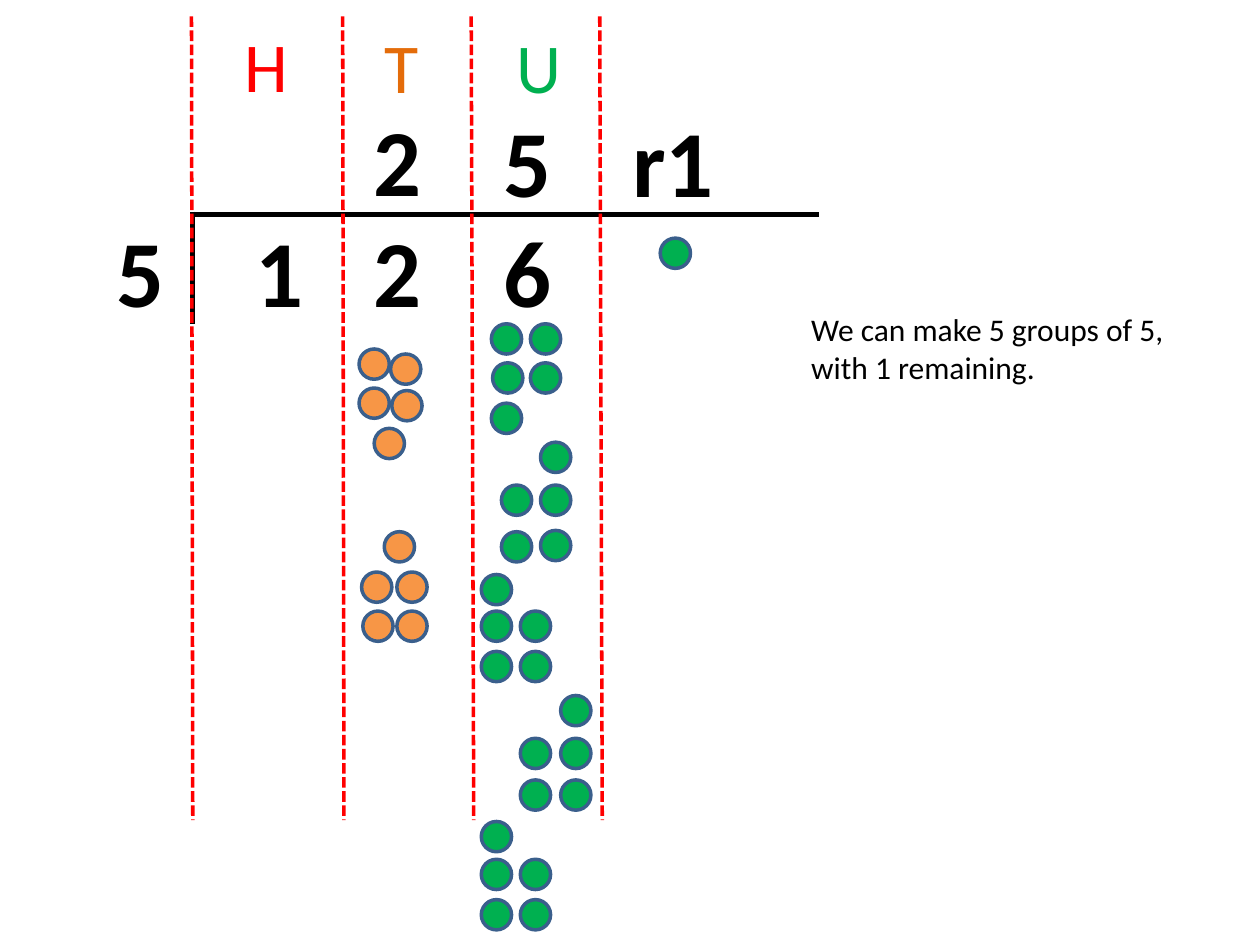
from pptx import Presentation
from pptx.dml.color import RGBColor
from pptx.enum.dml import MSO_LINE
from pptx.enum.shapes import MSO_CONNECTOR, MSO_SHAPE
from pptx.enum.text import MSO_AUTO_SIZE
from pptx.oxml.ns import qn
from pptx.util import Inches, Pt
from lxml import etree

STRAIGHT = MSO_CONNECTOR.STRAIGHT
OVAL = MSO_SHAPE.OVAL
DASH = MSO_LINE.SQUARE_DOT
FIT = MSO_AUTO_SIZE.SHAPE_TO_FIT_TEXT

BLACK = RGBColor(0x00, 0x00, 0x00)
RED = RGBColor(0xFF, 0x00, 0x00)
DARK_ORANGE = RGBColor(0xE4, 0x6C, 0x0A)
ORANGE = RGBColor(0xF7, 0x96, 0x46)
GREEN = RGBColor(0x00, 0xB0, 0x50)
BLUE = RGBColor(0x3A, 0x5F, 0x8C)

DIGIT_W, DIGIT_H = 0.47, 1.01
LETTER_H = 0.77
COUNTER = 0.24

TENS_GROUPS = [
    [(2.85, 2.77), (3.1, 2.81), (2.85, 3.08), (3.11, 3.1), (2.97, 3.4)],
    [(3.05, 4.22), (2.87, 4.54), (3.15, 4.54), (2.88, 4.85), (3.15, 4.85)],
]
UNITS_GROUPS = [
    [(3.9, 2.57), (4.21, 2.57), (3.91, 2.88), (4.21, 2.88), (3.9, 3.2)],
    [(4.29, 3.51), (3.98, 3.85), (4.29, 3.85), (3.98, 4.22), (4.29, 4.21)],
    [(3.82, 4.56), (3.82, 4.85), (4.13, 4.85), (3.82, 5.17), (4.13, 5.17)],
    [(4.45, 5.52), (4.13, 5.86), (4.45, 5.86), (4.13, 6.19), (4.45, 6.19)],
    [(3.82, 6.52), (3.82, 6.82), (4.13, 6.82), (3.82, 7.14), (4.13, 7.14)],
]
REMAINDER = [[(5.24, 1.89)]]


class Board:
    font = "Calibri"

    def __init__(self, slide):
        self.s = slide

    def text(self, text, x, y, w, h, size, color=BLACK, bold=False):
        sp = self.s.shapes.add_textbox(Inches(x), Inches(y), Inches(w), Inches(h))
        tf = sp.text_frame
        tf.word_wrap = True
        tf.auto_size = FIT
        r = tf.paragraphs[0].add_run()
        r.text = text
        r.font.name = self.font
        r.font.size = Pt(size)
        r.font.bold = bold
        r.font.color.rgb = color

    def digit(self, text, x, y, w=DIGIT_W):
        self.text(text, x, y, w, DIGIT_H, 54, bold=True)

    def line(self, x1, y1, x2, y2, color, width, dash=None):
        sp = self.s.shapes.add_connector(
            STRAIGHT, Inches(x1), Inches(y1), Inches(x2), Inches(y2))
        sp.line.color.rgb = color
        sp.line.width = Pt(width)
        if dash:
            sp.line.dash_style = dash
        etree.SubElement(sp._element.spPr, qn("a:effectLst"))

    def counters(self, groups, color):
        for group in groups:
            for x, y in group:
                sp = self.s.shapes.add_shape(
                    OVAL, Inches(x), Inches(y), Inches(COUNTER), Inches(COUNTER))
                sp.shadow.inherit = False
                sp.fill.solid()
                sp.fill.fore_color.rgb = color
                sp.line.color.rgb = BLUE
                sp.line.width = Pt(2)


def main():
    prs = Presentation()
    prs.slide_width = Inches(10)
    prs.slide_height = Inches(7.5)
    board = Board(prs.slides.add_slide(prs.slide_layouts[6]))

    board.line(1.53, 1.68, 1.53, 2.57, BLACK, 3)
    board.line(1.53, 1.7, 6.5, 1.7, BLACK, 3)
    for top, bottom in [(1.52, 1.53), (2.72, 2.73), (3.74, 3.76), (4.76, 4.78)]:
        board.line(top, 0.13, bottom, 6.51, RED, 2, DASH)

    for letter, x, y, color in [("H", 1.84, 0.13, RED),
                                ("T", 2.95, 0.14, DARK_ORANGE),
                                ("U", 4, 0.14, GREEN)]:
        board.text(letter, x, y, DIGIT_W, LETTER_H, 40, color)

    for digit, x in [("5", 0.83), ("1", 1.93), ("2", 2.87), ("6", 3.9)]:
        board.digit(digit, x, 1.64)
    board.digit("2", 2.87, 0.76)
    board.digit("5", 3.9, 0.77)
    board.digit("r1", 4.92, 0.77, 1.26)

    board.counters(TENS_GROUPS, ORANGE)
    board.counters(UNITS_GROUPS + REMAINDER, GREEN)

    board.text("We can make 5 groups of 5, with 1 remaining.",
               6.34, 2.41, 3.47, 0.71, 18)

    prs.save("out.pptx")


if __name__ == "__main__":
    main()
